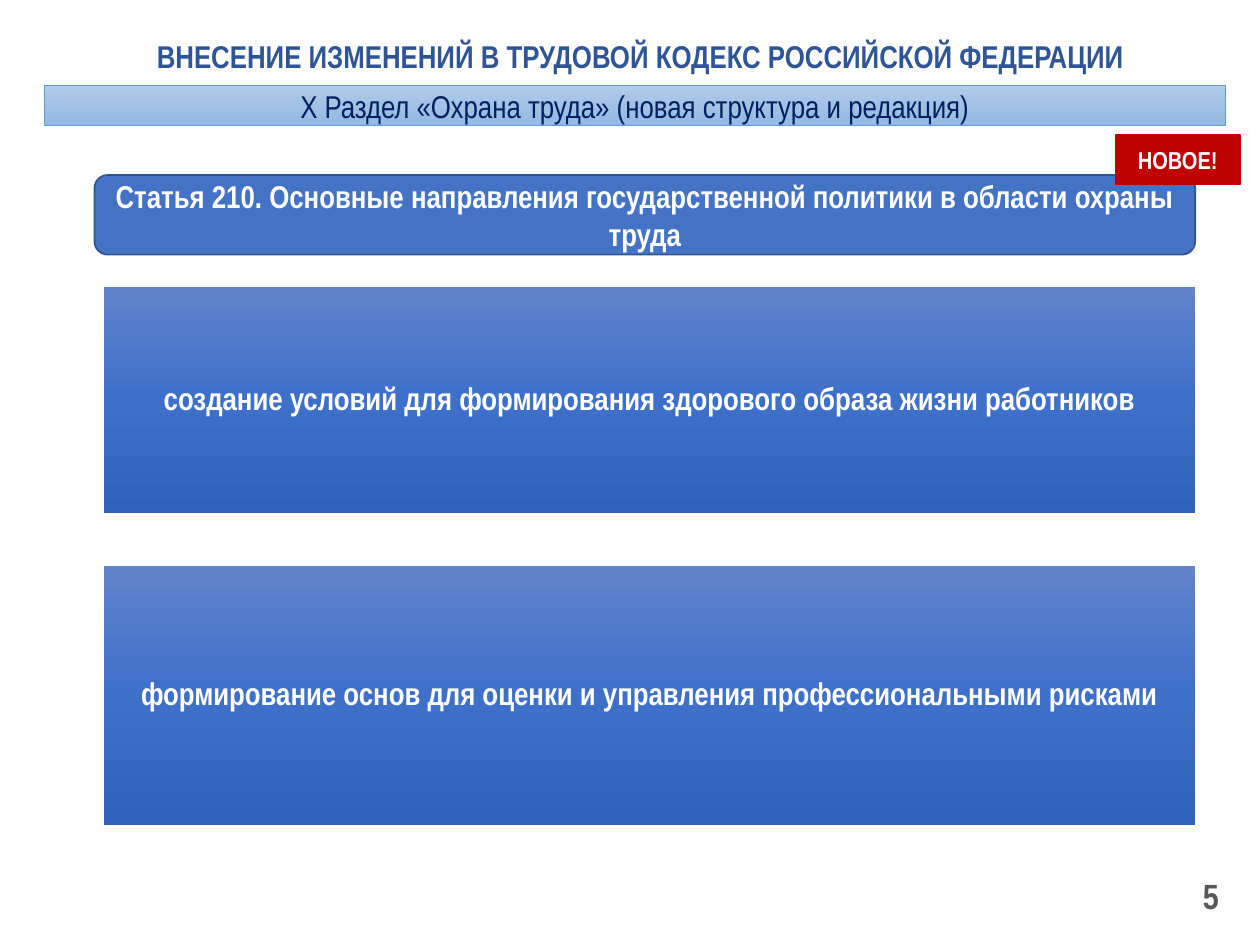
import copy
from dataclasses import dataclass

import pptx
import pptx.dml.color
import pptx.enum.shapes
import pptx.enum.text
import pptx.util

Pt = pptx.util.Pt
SHAPES = pptx.enum.shapes.MSO_SHAPE
ALIGN = pptx.enum.text.PP_ALIGN


@dataclass(frozen=True)
class Theme:
    font: str = "Arial Narrow"
    page_size: int = 20
    text_size: int = 18
    tag_size: int = 14
    title: str = "2F5597"
    white: str = "FFFFFF"
    gray: str = "595959"
    navy: str = "002060"
    red: str = "C00000"
    article: str = "4472C4"
    article_line: str = "325491"
    section_line: str = "5B9BD5"
    section_gradient: tuple = ("B1CBE9", "A3C1E5", "93B9E4")
    card_gradient: tuple = ("6183CB", "3E70CA", "3062BB")


def rgb(color):
    return pptx.dml.color.RGBColor.from_string(color)


class SlideBuilder:
    def __init__(self, slide, theme):
        self.slide = slide
        self.theme = theme

    def set_text(self, shape, text, color, size=None, bold=True, align=ALIGN.CENTER):
        frame = shape.text_frame
        frame.text = text
        frame.word_wrap = True
        frame.auto_size = pptx.enum.text.MSO_AUTO_SIZE.NONE
        frame.vertical_anchor = pptx.enum.text.MSO_ANCHOR.MIDDLE
        paragraph = frame.paragraphs[0]
        paragraph.alignment = align
        for run in paragraph.runs:
            run.font.name = self.theme.font
            run.font.size = Pt(size or self.theme.text_size)
            run.font.bold = bold
            run.font.color.rgb = rgb(color)

    def title(self, box, text):
        shape = self.slide.shapes.title
        shape.left, shape.top, shape.width, shape.height = map(Pt, box)
        self.set_text(shape, text, self.theme.title)

    def page_number(self, box, text):
        shape = self.slide.shapes.add_textbox(*map(Pt, box))
        self.set_text(shape, text, self.theme.gray, self.theme.page_size, align=ALIGN.RIGHT)

    def gradient(self, fill, colors):
        """Spread the colours evenly from top to bottom."""
        fill.gradient()
        fill.gradient_angle = 270
        first = fill.gradient_stops[0]._gs
        for _ in range(len(colors) - 2):
            first.addnext(copy.deepcopy(first))
        for index, (stop, color) in enumerate(zip(fill.gradient_stops, colors)):
            stop.position = index / (len(colors) - 1)
            stop.color.rgb = rgb(color)

    def block(self, box, text, fill, line=None, line_width=1, kind=SHAPES.RECTANGLE,
              color=None, **text_style):
        shape = self.slide.shapes.add_shape(kind, *map(Pt, box))
        shape.shadow.inherit = False
        if isinstance(fill, tuple):
            self.gradient(shape.fill, fill)
        else:
            shape.fill.solid()
            shape.fill.fore_color.rgb = rgb(fill)
        if line:
            shape.line.color.rgb = rgb(line)
            shape.line.width = Pt(line_width)
        else:
            shape.line.fill.background()
        self.set_text(shape, text, color or self.theme.white, **text_style)
        return shape

    def card(self, box, text):
        frame = self.block(box, text, self.theme.card_gradient).text_frame
        frame.margin_left = frame.margin_right = Pt(5)
        frame.margin_top = frame.margin_bottom = Pt(5)
        frame.paragraphs[0].line_spacing = 0.9


def main():
    presentation = pptx.Presentation()
    presentation.slide_width, presentation.slide_height = Pt(720), Pt(540)
    theme = Theme()
    slide = presentation.slides.add_slide(presentation.slide_layouts[5])
    builder = SlideBuilder(slide, theme)

    # Title and page number
    builder.title((60, 9.5, 612, 45),
                  "ВНЕСЕНИЕ ИЗМЕНЕНИЙ В ТРУДОВОЙ КОДЕКС РОССИЙСКОЙ ФЕДЕРАЦИИ")
    builder.page_number((535.5, 497, 168, 29), "5")

    # Policy directions
    cards = (
        (164, 129, "создание условий для формирования здорового образа жизни работников"),
        (323.5, 148, "формирование основ для оценки и управления профессиональными рисками"),
    )
    for top, height, text in cards:
        builder.card((59.5, top, 623.5, height), text)

    # Article heading with its tag
    builder.block((54, 100, 629, 45.5),
                  "Статья 210. Основные направления государственной политики в области охраны труда",
                  theme.article, theme.article_line, kind=SHAPES.ROUNDED_RECTANGLE)
    builder.block((637.5, 77, 71, 28.5), "НОВОЕ!", theme.red, theme.red,
                  size=theme.tag_size)

    # Section band
    builder.block((25.5, 49, 674.5, 22.5),
                  "Х Раздел «Охрана труда» (новая структура и редакция)",
                  theme.section_gradient, theme.section_line, line_width=0.5,
                  color=theme.navy, bold=False)

    presentation.save("out.pptx")


if __name__ == "__main__":
    main()
